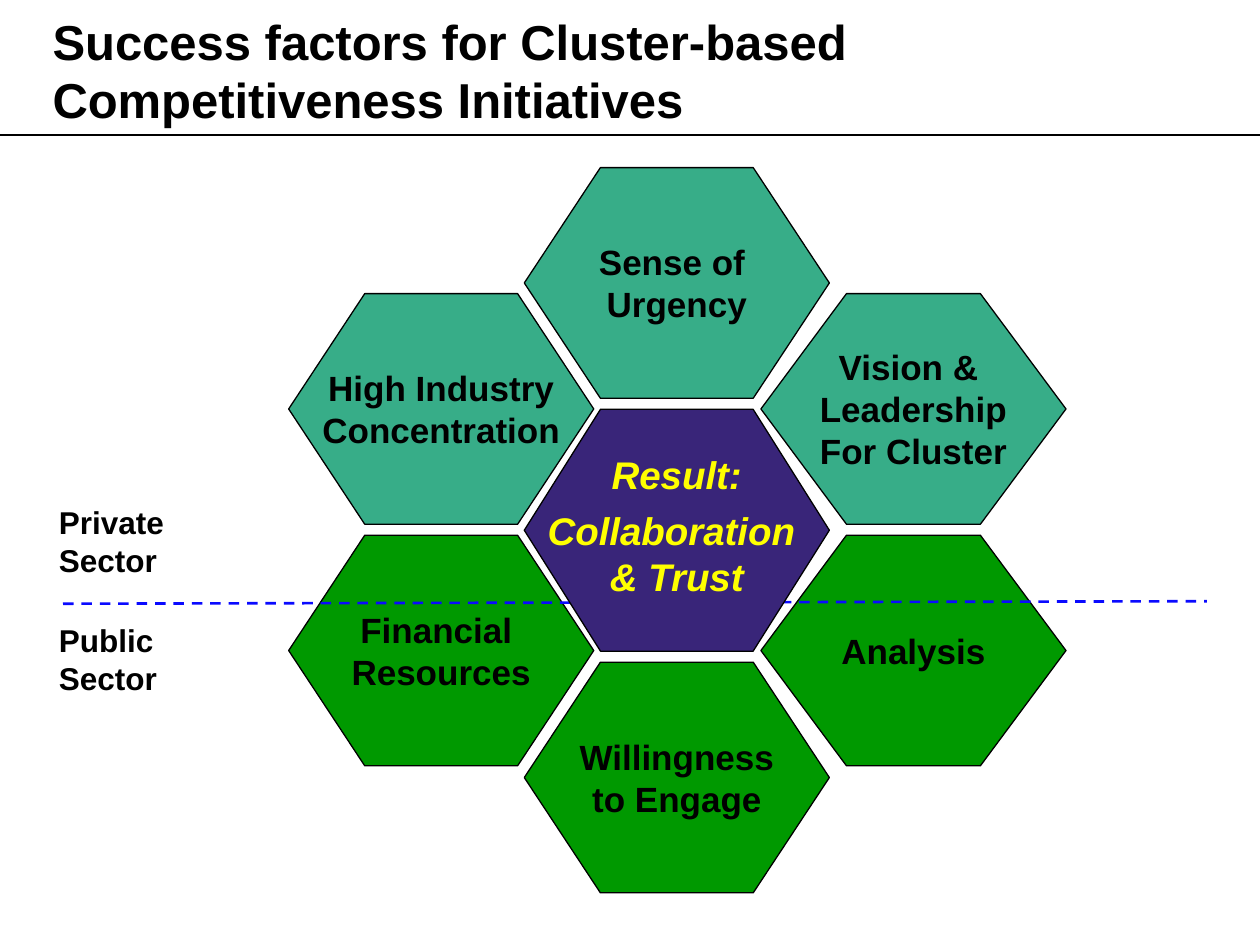
from lxml.etree import SubElement
from pptx import Presentation
from pptx.dml.color import RGBColor
from pptx.enum.dml import MSO_LINE
from pptx.enum.shapes import MSO_CONNECTOR, MSO_SHAPE
from pptx.enum.text import MSO_ANCHOR, PP_ALIGN
from pptx.oxml.ns import qn
from pptx.util import Cm, Pt

# Content
TITLE = "Success factors for Cluster-based Competitiveness Initiatives"
# Each column: left, top, hexagon slant, cells from top to bottom (kind, lines)
COLUMNS = [
    (10.57, 3.38, 0.33, [("private", ["Sense of ", "Urgency"]),
                         ("result", ["Result:", "Collaboration ", "& Trust"]),
                         ("public", ["Willingness", "to Engage"])]),
    (5.82, 5.92, 0.33, [("private", ["High Industry", "Concentration"]),
                        ("public", ["Financial ", "Resources"])]),
    (15.34, 5.92, 0.371, [("private", ["Vision & ", "Leadership", "For Cluster"]),
                          ("public", ["Analysis"])]),
]
# Sector labels: lines, top, width
SECTORS = [(["Private Sector"], 10.01, 4.45), (["Public", "Sector"], 12.4, 5.08)]

THEME = {
    "font": "Arial", "ink": "000000", "highlight": "FFFF00", "divider": "0A0AFF",
    "private": "37AD88", "public": "009900", "result": "392579",
    "title_size": 28, "cell_size": 20, "result_size": 22, "sector_size": 18,
}
HEXAGON_WIDTH, HEXAGON_HEIGHT, RESULT_HEIGHT, GAP = 6.15, 4.65, 4.88, 0.22


def color(name):
    return RGBColor.from_string(THEME[name])


def write(frame, lines, size, ink="ink", align=PP_ALIGN.LEFT, italic=None):
    for index, line in enumerate(lines):
        para = frame.paragraphs[0] if index == 0 else frame.add_paragraph()
        para.text = line
        para.alignment = align
        font = para.font
        font.name, font.size = THEME["font"], Pt(THEME[size])
        font.bold, font.italic = True, italic
        font.color.rgb = color(ink)


def add_label(page, lines, size, left, top, width, height, anchor=MSO_ANCHOR.TOP):
    box = page.shapes.add_textbox(Cm(left), Cm(top), Cm(width), Cm(height))
    box.text_frame.word_wrap = True
    box.text_frame.vertical_anchor = anchor
    write(box.text_frame, lines, size)


def add_line(page, start, end, ink, width):
    line = page.shapes.add_connector(
        MSO_CONNECTOR.STRAIGHT, *(Cm(value) for value in start + end))
    line.line.color.rgb, line.line.width = color(ink), Pt(width)
    SubElement(line._element.spPr, qn("a:effectLst"))
    return line


def add_hexagon(page, kind, lines, left, top, height, slant):
    hexagon = page.shapes.add_shape(
        MSO_SHAPE.HEXAGON, Cm(left), Cm(top), Cm(HEXAGON_WIDTH), Cm(height))
    hexagon.adjustments[0] = slant
    hexagon.shadow.inherit = False
    hexagon.fill.solid()
    hexagon.fill.fore_color.rgb = color(kind)
    hexagon.line.color.rgb, hexagon.line.width = color("ink"), Pt(0.75)
    frame = hexagon.text_frame
    frame.word_wrap = False
    if kind == "result":
        frame.vertical_anchor = MSO_ANCHOR.TOP
        frame.margin_left = frame.margin_right = Cm(0.15)
        frame.margin_top = frame.margin_bottom = Cm(0.03)
        write(frame, lines, "result_size", "highlight", PP_ALIGN.CENTER, True)
        frame.paragraphs[1].space_before = Pt(5.5)
    else:
        frame.vertical_anchor = MSO_ANCHOR.MIDDLE
        write(frame, lines, "cell_size", align=PP_ALIGN.CENTER)


def main():
    deck = Presentation()
    deck.slide_width, deck.slide_height = Cm(25.4), Cm(19.05)
    page = deck.slides.add_slide(deck.slide_layouts[6])

    # Title and rule
    add_line(page, (0, 2.72), (25.4, 2.72), "ink", 0.75)
    add_label(page, [TITLE], "title_size", 0.81, -0.56, 22.68, 3.28, MSO_ANCHOR.BOTTOM)

    # Honeycomb: stack each column downwards, keeping the result for the front
    result = None
    for left, top, slant, cells in COLUMNS:
        for kind, lines in cells:
            height = RESULT_HEIGHT if kind == "result" else HEXAGON_HEIGHT
            cell = (kind, lines, left, top, height, slant)
            if kind == "result":
                result = cell[:-1] + (0.315,)
            else:
                add_hexagon(page, *cell)
            top += height + GAP

    # Sector labels and divider
    for lines, top, width in SECTORS:
        add_label(page, lines, "sector_size", 0.94, top, width, 2.29)
    divider = add_line(page, (1.27, 12.17), (24.33, 12.12), "divider", 1.5)
    divider.line.dash_style = MSO_LINE.DASH

    add_hexagon(page, *result)
    deck.save("out.pptx")


if __name__ == "__main__":
    main()
